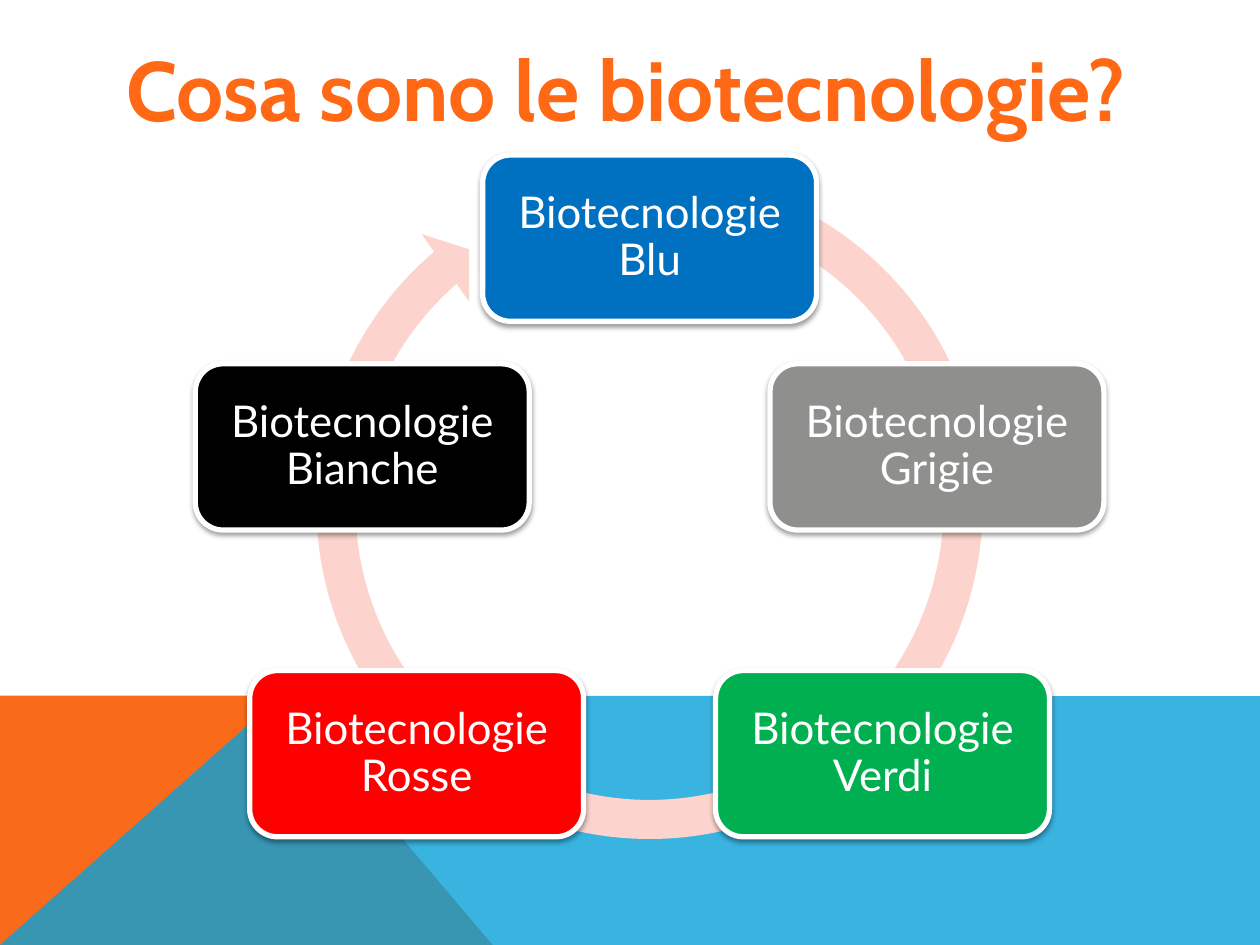
"""Build a slide showing the five colours of biotechnology as a cycle."""
from lxml import etree
from pptx import Presentation
from pptx.dml.color import RGBColor
from pptx.enum.shapes import MSO_SHAPE as Kind
from pptx.enum.text import MSO_ANCHOR as Anchor, MSO_AUTO_SIZE as Fit, PP_ALIGN as Align
from pptx.oxml import parse_xml
from pptx.oxml.ns import nsdecls, qn
from pptx.util import Pt

HUES = {"title": "FF6815", "orange": "F96A1B", "sky": "08A1D9", "ring": "FDD4CD",
        "white": "FFFFFF", "black": "000000", "blue": "0070C0", "grey": "8F8F8D",
        "green": "00B050", "red": "FF0000"}


def paint(shape, hue):
    shape.shadow.inherit = False
    shape.fill.solid()
    shape.fill.fore_color.rgb = RGBColor.from_string(HUES[hue])
    shape.line.fill.background()


def style(run, face, size, hue):
    run.font.name = face
    run.font.size = Pt(size)
    run.font.color.rgb = RGBColor.from_string(HUES[hue])


deck = Presentation()
deck.slide_width, deck.slide_height = Pt(720), Pt(540)
slide = deck.slides.add_slide(deck.slide_layouts[5])
shapes = slide.shapes

bands = [
    ("orange", [(0, 540), (0, 397.6), (160.6, 397.6), (281.5, 540)]),
    ("sky", [(0, 540), (160.6, 397.6), (720, 397.8), (720, 540)]),
]
for hue, spots in bands:
    dots = [(Pt(x), Pt(y)) for x, y in spots]
    pen = shapes.build_freeform(*dots[0])
    pen.add_line_segments(dots[1:], close=True)
    band = pen.convert_to_shape()
    paint(band, hue)
tint = band.fill._xPr.find(".//" + qn("a:srgbClr"))
etree.SubElement(tint, qn("a:alpha"), val="80000")

title = shapes.title
title.left, title.top, title.width, title.height = Pt(64.8), Pt(28.8), Pt(591.8), Pt(43.2)
frame = title.text_frame
frame.auto_size = Fit.NONE
frame.vertical_anchor = Anchor.MIDDLE
para = frame.paragraphs[0]
para.alignment = Align.LEFT
run = para.add_run()
run.text = "Cosa sono le biotecnologie?"
style(run, "Cabin", 48, "title")
run.font.bold = True
run.font._element.insert(0, parse_xml(
    f'<a:ln {nsdecls("a")} w="{Pt(1.42)}"><a:solidFill>'
    f'<a:srgbClr val="{HUES["title"]}"/></a:solidFill></a:ln>'))

ring = shapes.add_shape(Kind.CIRCULAR_ARROW, Pt(168.5), Pt(86.4), Pt(405.4), Pt(405.4))
for i, value in enumerate([0.055, 3.307, 137.629, 173.939, 0.058]):
    ring.adjustments[i] = value
paint(ring, "ring")

mid, wide, high = 371.2, 190.8, 95
cards = [
    ("Blu", "blue", 0, 88.6),
    ("Grigie", "grey", 164.2, 207.9),
    ("Verdi", "green", 133.1, 383.2),
    ("Rosse", "red", -133.1, 383.2),
    ("Bianche", "black", -164.2, 207.9),
]
for name, hue, shift, top in cards:
    card = shapes.add_shape(Kind.ROUNDED_RECTANGLE, Pt(mid + shift - wide / 2), Pt(top),
                            Pt(wide), Pt(high))
    paint(card, hue)
    card.line.color.rgb = RGBColor.from_string(HUES["white"])
    card.line.width = Pt(3)
    glow = card._element.spPr.find(qn("a:effectLst"))
    glow.append(parse_xml(
        f'<a:outerShdw {nsdecls("a")} blurRad="{Pt(3.1)}" dist="{Pt(1.6)}" dir="5400000" '
        f'rotWithShape="0"><a:srgbClr val="{HUES["black"]}"><a:alpha val="38000"/>'
        '</a:srgbClr></a:outerShdw>'))
    frame = card.text_frame
    frame.word_wrap = True
    frame.vertical_anchor = Anchor.MIDDLE
    frame.margin_left = frame.margin_right = Pt(7.2)
    frame.margin_top = frame.margin_bottom = Pt(7.2)
    para = frame.paragraphs[0]
    para.alignment = Align.CENTER
    para.line_spacing = 0.9
    run = para.add_run()
    run.text = f"Biotecnologie {name}"
    style(run, "Lato", 25, "white")

deck.save("out.pptx")
